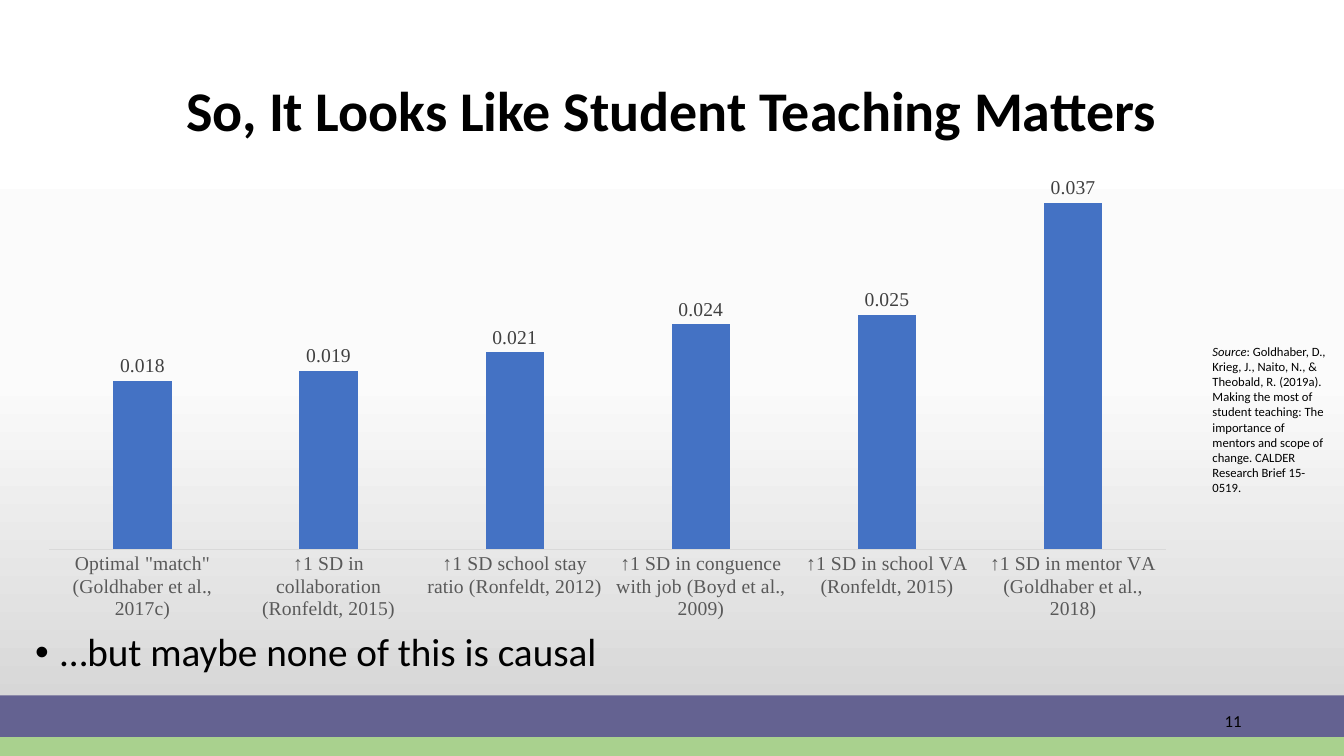
import copy

import lxml.etree
import pptx
import pptx.chart.data
import pptx.dml.color
import pptx.enum.chart
import pptx.enum.shapes
import pptx.enum.text
import pptx.oxml
import pptx.oxml.ns
import pptx.util

Pt = pptx.util.Pt
qn = pptx.oxml.ns.qn
ALIGN = pptx.enum.text.PP_ALIGN
ANCHOR = pptx.enum.text.MSO_ANCHOR

EFFECTS = [
    ('Optimal "match" (Goldhaber et al., 2017c)', 0.018),
    ("↑1 SD in collaboration (Ronfeldt, 2015)", 0.019),
    ("↑1 SD school stay ratio (Ronfeldt, 2012)", 0.021),
    ("↑1 SD in conguence with job (Boyd et al., 2009)", 0.024),
    ("↑1 SD in school VA (Ronfeldt, 2015)", 0.025),
    ("↑1 SD in mentor VA (Goldhaber et al., 2018)", 0.037),
]
CITATION = (
    ": Goldhaber, D., Krieg, J., Naito, N., & Theobald, R. (2019a). "
    "Making the most of student teaching: The importance of mentors and "
    "scope of change. CALDER Research Brief 15-0519."
)


def color(value):
    return pptx.dml.color.RGBColor.from_string(value)


def format_font(font, size, name="Calibri", fill="000000", bold=False, italic=False):
    font.size = Pt(size)
    font.name = name
    font.color.rgb = color(fill)
    font.bold = bold
    font.italic = italic


def add_text(paragraph, text, align=ALIGN.LEFT, spacing=1.0, **font_format):
    paragraph.alignment = align
    paragraph.line_spacing = spacing
    run = paragraph.add_run()
    run.text = text
    format_font(run.font, **font_format)


def add_text_box(slide, box, anchor=ANCHOR.TOP):
    frame = slide.shapes.add_textbox(*map(Pt, box)).text_frame
    frame.word_wrap = True
    frame.vertical_anchor = anchor
    return frame.paragraphs[0]


def paint_background(slide):
    fill = slide.background.fill
    fill.gradient()
    fill.gradient_angle = 270
    stop_list = fill._fill._gradFill.find(qn("a:gsLst"))
    stop_list.append(copy.deepcopy(stop_list[-1]))
    stops = [(0, "FFFFFF"), (0.5, "FBFBFB"), (1, "D1D1D1")]
    for stop, (position, value) in zip(fill.gradient_stops, stops):
        stop.position = position
        stop.color.rgb = color(value)


def add_footer(slide, box):
    left, top, width, height = box
    purple_height = 0.69 * height
    bands = [
        (top, purple_height, "646291"),
        (top + purple_height, height - purple_height, "A9D18E"),
    ]
    for band_top, band_height, value in bands:
        band = slide.shapes.add_shape(
            pptx.enum.shapes.MSO_SHAPE.RECTANGLE,
            Pt(left), Pt(band_top), Pt(width), Pt(band_height),
        )
        band.shadow.inherit = False
        band.fill.solid()
        band.fill.fore_color.rgb = color(value)
        band.line.fill.background()
    number_box = (left + width - 282, top + 3.5, 216, 29)
    number = add_text_box(slide, number_box, ANCHOR.MIDDLE)
    add_text(number, "11", align=ALIGN.RIGHT, size=12)


def add_title(slide, box):
    title = slide.shapes.title
    title.left, title.top, title.width, title.height = map(Pt, box)
    title.text_frame.vertical_anchor = ANCHOR.MIDDLE
    add_text(
        title.text_frame.paragraphs[0], "So, It Looks Like Student Teaching Matters",
        align=ALIGN.CENTER, spacing=0.9, size=40, bold=True,
    )


def add_bullet(slide, box):
    paragraph = add_text_box(slide, box)
    add_text(paragraph, "…but maybe none of this is causal", spacing=0.9, size=28)
    paragraph.space_before = Pt(10)
    properties = paragraph._p.get_or_add_pPr()
    properties.set("marL", str(Pt(18)))
    properties.set("indent", str(Pt(-18)))
    lxml.etree.SubElement(properties, qn("a:buFont")).set("typeface", "Arial")
    lxml.etree.SubElement(properties, qn("a:buChar")).set("char", "•")


def add_source(slide, box):
    paragraph = add_text_box(slide, box)
    add_text(paragraph, "Source", size=9, italic=True)
    add_text(paragraph, CITATION, size=9)


def set_plot_area(chart, **fractions):
    layout = pptx.oxml.parse_xml(
        f'<c:layout {pptx.oxml.ns.nsdecls("c")}><c:manualLayout>'
        '<c:layoutTarget val="inner"/><c:xMode val="edge"/><c:yMode val="edge"/>'
        + "".join(f'<c:{key} val="{value}"/>' for key, value in fractions.items())
        + "</c:manualLayout></c:layout>"
    )
    plot_area = chart._chartSpace.chart.plotArea
    for old_layout in plot_area.findall(qn("c:layout")):
        plot_area.remove(old_layout)
    plot_area.insert(0, layout)


def add_effect_chart(slide, box):
    data = pptx.chart.data.CategoryChartData(number_format="#,##0.000")
    categories, values = zip(*EFFECTS)
    data.categories = categories
    data.add_series("Series 1", values)
    chart = slide.shapes.add_chart(
        pptx.enum.chart.XL_CHART_TYPE.COLUMN_CLUSTERED, *map(Pt, box), data
    ).chart
    chart.has_legend = False
    chart.has_title = False
    format_font(chart.font, size=10)
    set_plot_area(chart, x=0.02, y=0.02, w=0.96, h=0.81)

    category_axis = chart.category_axis
    category_axis.major_tick_mark = pptx.enum.chart.XL_TICK_MARK.NONE
    category_axis.format.line.color.rgb = color("D9D9D9")
    category_axis.format.line.width = Pt(0.75)
    format_font(category_axis.tick_labels.font, 14, "Times New Roman", "595959")
    value_axis = chart.value_axis
    value_axis.visible = False
    value_axis.has_major_gridlines = False
    value_axis.minimum_scale = 0
    value_axis.maximum_scale = 0.04

    plot = chart.plots[0]
    plot.vary_by_categories = False
    plot.gap_width = 219
    plot.overlap = -27
    series = plot.series[0]
    series.format.fill.solid()
    series.format.fill.fore_color.rgb = color("4472C4")
    labels = series.data_labels
    labels.show_value = True
    labels.position = pptx.enum.chart.XL_LABEL_POSITION.OUTSIDE_END
    labels.number_format = "#,##0.000"
    labels.number_format_is_linked = False
    format_font(labels.font, 14, "Times New Roman", "404040")


def main():
    presentation = pptx.Presentation()
    presentation.slide_width = Pt(960)
    presentation.slide_height = Pt(540)
    slide = presentation.slides.add_slide(presentation.slide_layouts[5])
    paint_background(slide)
    add_footer(slide, (0, 496.8, 960, 43.2))
    add_title(slide, (18, 29, 923, 104))
    add_bullet(slide, (18, 448.5, 923, 37.5))
    add_source(slide, (859, 242, 96.5, 116.5))
    add_effect_chart(slide, (18.7, 118, 831, 330.5))
    presentation.save("out.pptx")


if __name__ == "__main__":
    main()
